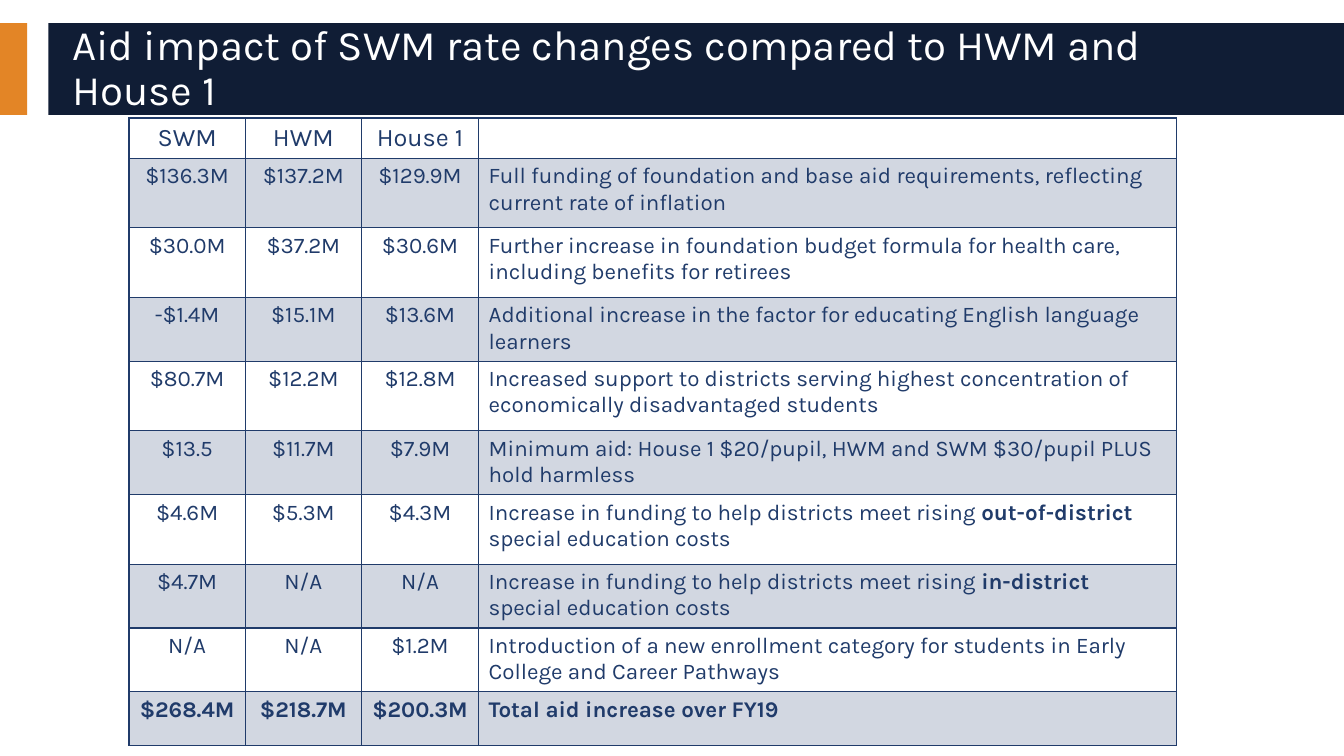
from dataclasses import dataclass

from lxml import etree
from pptx import Presentation
from pptx import util as u
from pptx.dml import color
from pptx.enum import shapes, text
from pptx.oxml import ns

WIDE, TALL = u.Inches(13.33), u.Inches(7.5)
FACE = "Karla"
NAVY, ORANGE, BLUE, WHITE = "101D35", "E38526", "203B6A", "FFFFFF"
TINT = 20


@dataclass(frozen=True)
class Box:
    left: float
    top: float
    width: float
    height: float

    def frame(self) -> tuple[int, int, int, int]:
        return across(self.left), down(self.top), across(self.width), down(self.height)


@dataclass(frozen=True)
class Bar:
    box: Box
    fill: str


@dataclass(frozen=True)
class Row:
    height: float
    cells: tuple[str, str, str, str]
    strong: str = ""
    size: int = 16


BARS = (
    Bar(Box(0, 3.07, 2.03, 12.13), ORANGE),
    Bar(Box(3.6, 3.07, 96.4, 12.13), NAVY),
)
TITLE = Box(4.65, 4.27, 93.32, 9.87)
GRID = Box(9.6, 15.6, 77.92, 82.6)
COLS = (8.65, 8.65, 8.72, 51.9)
HIGH, LOW = 9.2, 8.27
ROWS = (
    Row(5.15, ("SWM", "HWM", "House 1", ""), size=18),
    Row(HIGH, ("$136.3M", "$137.2M", "$129.9M",
               "Full funding of foundation and base aid requirements, reflecting current rate of inflation")),
    Row(HIGH, ("$30.0M", "$37.2M", "$30.6M",
               "Further increase in foundation budget formula for health care, including benefits for retirees")),
    Row(LOW, ("-$1.4M", "$15.1M", "$13.6M",
              "Additional increase in the factor for educating English language learners")),
    Row(HIGH, ("$80.7M", "$12.2M", "$12.8M",
               "Increased support to districts serving highest concentration of economically disadvantaged students")),
    Row(LOW, ("$13.5", "$11.7M", "$7.9M",
              "Minimum aid: House 1 $20/pupil, HWM and SWM $30/pupil PLUS hold harmless")),
    Row(HIGH, ("$4.6M", "$5.3M", "$4.3M",
               "Increase in funding to help districts meet rising out-of-district special education costs"),
        "out-of-district "),
    Row(LOW, ("$4.7M", "N/A", "N/A",
              "Increase in funding to help districts meet rising in-district special education costs"),
        "in-district"),
    Row(LOW, ("N/A", "N/A", "$1.2M",
              "Introduction of a new enrollment category for students in Early College and Career Pathways")),
    Row(7.1, ("$268.4M", "$218.7M", "$200.3M", "Total aid increase over FY19"), "all"),
)


def across(share: float) -> int:
    return round(WIDE * share / 100)


def down(share: float) -> int:
    return round(TALL * share / 100)


def paint(target, tone: str) -> None:
    target.solid()
    target.fore_color.rgb = color.RGBColor.from_string(tone)


def style(run, size: int, tone: str, bold: bool = False) -> None:
    run.font.name = FACE
    run.font.size = u.Pt(size)
    run.font.bold = bold
    paint(run.font.fill, tone)


def draw_bar(slide, bar: Bar) -> None:
    shape = slide.shapes.add_shape(shapes.MSO_SHAPE.RECTANGLE, *bar.box.frame())
    shape.shadow.inherit = False
    paint(shape.fill, bar.fill)
    shape.line.fill.background()


def draw_title(slide) -> None:
    frame = slide.shapes.add_textbox(*TITLE.frame()).text_frame
    frame.word_wrap = True
    frame.vertical_anchor = text.MSO_ANCHOR.MIDDLE
    frame.text = "Aid impact of SWM rate changes compared to HWM and\vHouse 1"
    para = frame.paragraphs[0]
    para.line_spacing = 0.9
    for run in para.runs:
        style(run, 30, WHITE)


def edge(cell) -> None:
    props = cell._tc.get_or_add_tcPr()
    for spot, side in enumerate(("a:lnL", "a:lnR", "a:lnT", "a:lnB")):
        line = etree.Element(ns.qn(side), w=str(u.Pt(1)))
        fill = etree.SubElement(line, ns.qn("a:solidFill"))
        etree.SubElement(fill, ns.qn("a:srgbClr"), val=BLUE)
        props.insert(spot, line)


def shade(cell, band: bool) -> None:
    if not band:
        cell.fill.background()
        return
    paint(cell.fill, BLUE)
    tone = cell._tc.tcPr.find(".//" + ns.qn("a:srgbClr"))
    etree.SubElement(tone, ns.qn("a:alpha"), val=str(TINT * 1000))


def write(cell, words: str, row: Row, centre: bool) -> None:
    para = cell.text_frame.paragraphs[0]
    if centre:
        para.alignment = text.PP_ALIGN.CENTER
    if row.strong and row.strong in words:
        parts = words.partition(row.strong)
    else:
        parts = (words,)
    for part in parts:
        run = para.add_run()
        run.text = part
        style(run, row.size, BLUE, row.strong in ("all", part))


def draw_table(slide) -> None:
    table = slide.shapes.add_table(len(ROWS), len(COLS), *GRID.frame()).table
    table.first_row = table.horz_banding = False
    for col, width in zip(table.columns, COLS):
        col.width = across(width)
    for r, row in enumerate(ROWS):
        table.rows[r].height = down(row.height)
        for c, words in enumerate(row.cells):
            cell = table.cell(r, c)
            shade(cell, r % 2 == 1)
            edge(cell)
            if words:
                write(cell, words, row, c < len(COLS) - 1)


def main() -> None:
    deck = Presentation()
    deck.slide_width, deck.slide_height = WIDE, TALL
    slide = deck.slides.add_slide(deck.slide_layouts[6])
    paint(slide.background.fill, WHITE)
    for bar in BARS:
        draw_bar(slide, bar)
    draw_title(slide)
    draw_table(slide)
    deck.save("out.pptx")


if __name__ == "__main__":
    main()
